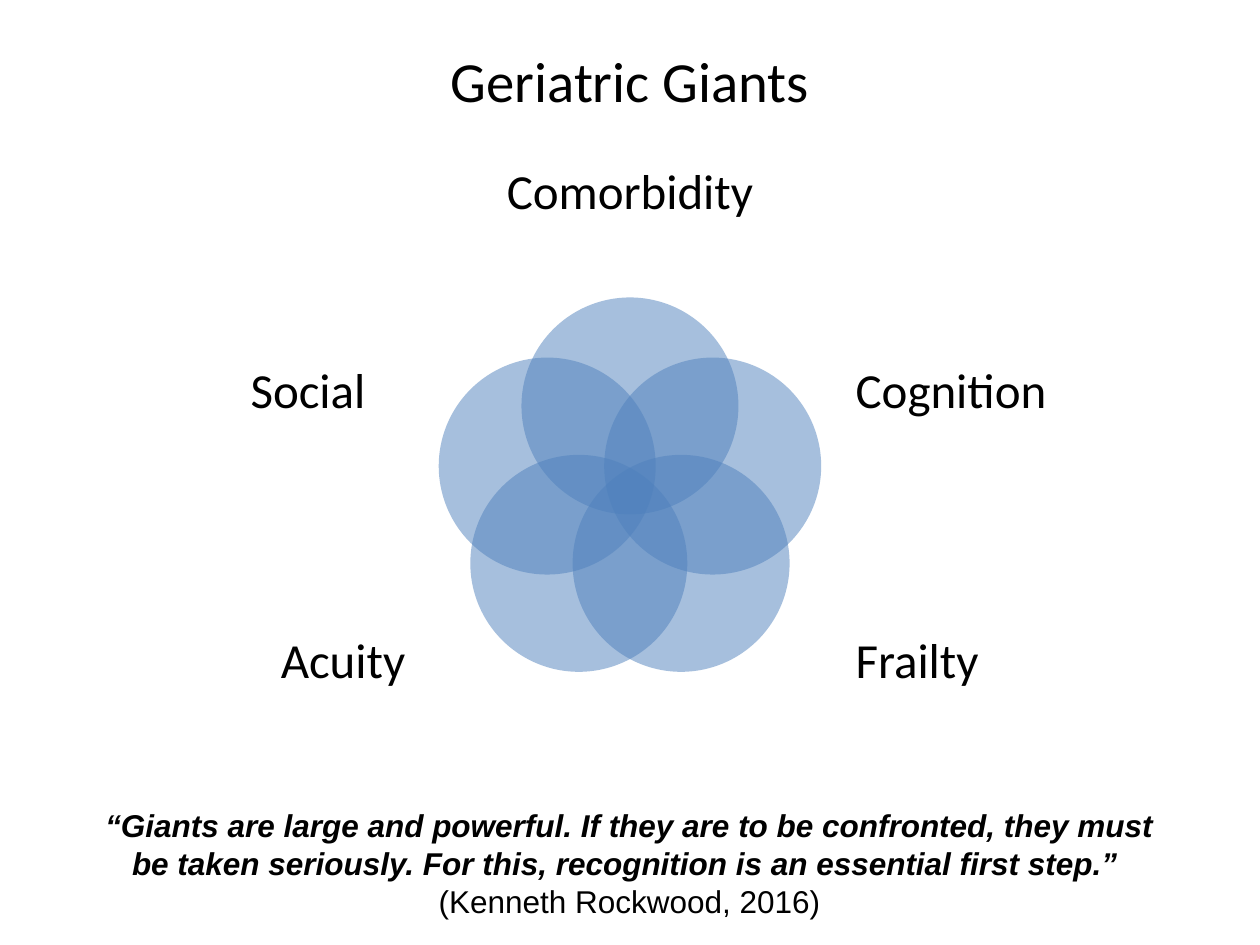
from dataclasses import dataclass
from math import cos, pi, sin

from lxml.etree import SubElement
from pptx import Presentation
from pptx.dml.color import RGBColor
from pptx.enum.shapes import MSO_SHAPE as Preset
from pptx.enum.text import MSO_ANCHOR as Anchor, PP_ALIGN as Align
from pptx.oxml.ns import qn
from pptx.slide import Slide
from pptx.util import Emu, Pt

PX_PER_INCH = 126
RING_CENTER = (630, 493)
RING_RADIUS = 87
CIRCLE_SIZE = 217
SIDE_LABEL = (226, 159)


@dataclass(frozen=True)
class Giant:
    name: str
    center: tuple[int, int]
    size: tuple[int, int] = SIDE_LABEL


GIANTS = [
    Giant("Comorbidity", (630, 194), (252, 146)),
    Giant("Cognition", (951, 393)),
    Giant("Frailty", (917, 663)),
    Giant("Acuity", (343, 663)),
    Giant("Social", (308, 393)),
]
QUOTE = (
    "“Giants are large and powerful. If they are to be confronted, they must "
    "be taken seriously. For this, recognition is an essential first step.” "
)


def px(length: float) -> Emu:
    return Emu(round(length * 914400 / PX_PER_INCH))


def color(value: str) -> RGBColor:
    return RGBColor.from_string(value)


def centered(center: tuple[float, float], size: tuple[int, int]) -> list[Emu]:
    (x, y), (width, height) = center, size
    return [px(v) for v in (x - width / 2, y - height / 2, width, height)]


def add_text(slide: Slide, box: list[Emu], lines: list[str], points: float,
             font: str = "Calibri", anchor: Anchor = Anchor.MIDDLE,
             spacing: float = 1.0, inset: bool = True):
    frame = slide.shapes.add_textbox(*box).text_frame
    frame.word_wrap = True
    frame.vertical_anchor = anchor
    if not inset:
        frame.margin_left = frame.margin_right = 0
        frame.margin_top = frame.margin_bottom = 0
    frame.text = "\n".join(lines)
    for paragraph in frame.paragraphs:
        paragraph.alignment = Align.CENTER
        paragraph.line_spacing = spacing
        for run in paragraph.runs:
            run.font.name = font
            run.font.size = Pt(points)
            run.font.color.rgb = color("000000")
    return frame


def add_circle(slide: Slide, center: tuple[float, float]) -> None:
    box = centered(center, (CIRCLE_SIZE, CIRCLE_SIZE))
    circle = slide.shapes.add_shape(Preset.OVAL, *box)
    circle.shadow.inherit = False
    circle.line.fill.background()
    circle.fill.solid()
    circle.fill.fore_color.rgb = color("4F81BD")
    tint = circle.fill._xPr.find(qn("a:solidFill"))[0]
    SubElement(tint, qn("a:alpha")).set("val", "50000")


def add_giant(slide: Slide, giant: Giant, angle: float) -> None:
    x, y = RING_CENTER
    add_circle(slide, (x + RING_RADIUS * sin(angle), y - RING_RADIUS * cos(angle)))
    add_text(slide, centered(giant.center, giant.size), [giant.name], 28,
             spacing=0.9, inset=False)


def main() -> None:
    """Build the slide of five overlapping geriatric giants."""
    deck = Presentation()
    deck.slide_width, deck.slide_height = px(1260), px(945)
    slide = deck.slides.add_slide(deck.slide_layouts[6])

    add_text(slide, centered((630, 80), (1170, 83)), ["Geriatric Giants"], 32.4)
    for index, giant in enumerate(GIANTS):
        add_giant(slide, giant, 2 * pi * index / len(GIANTS))

    quote = add_text(slide, [px(v) for v in (87, 800, 1085, 127)],
                     [QUOTE, "(Kenneth Rockwood, 2016)"], 18, "Arial", Anchor.TOP)
    for run in quote.paragraphs[0].runs:
        run.font.bold = run.font.italic = True

    deck.save("out.pptx")


if __name__ == "__main__":
    main()
